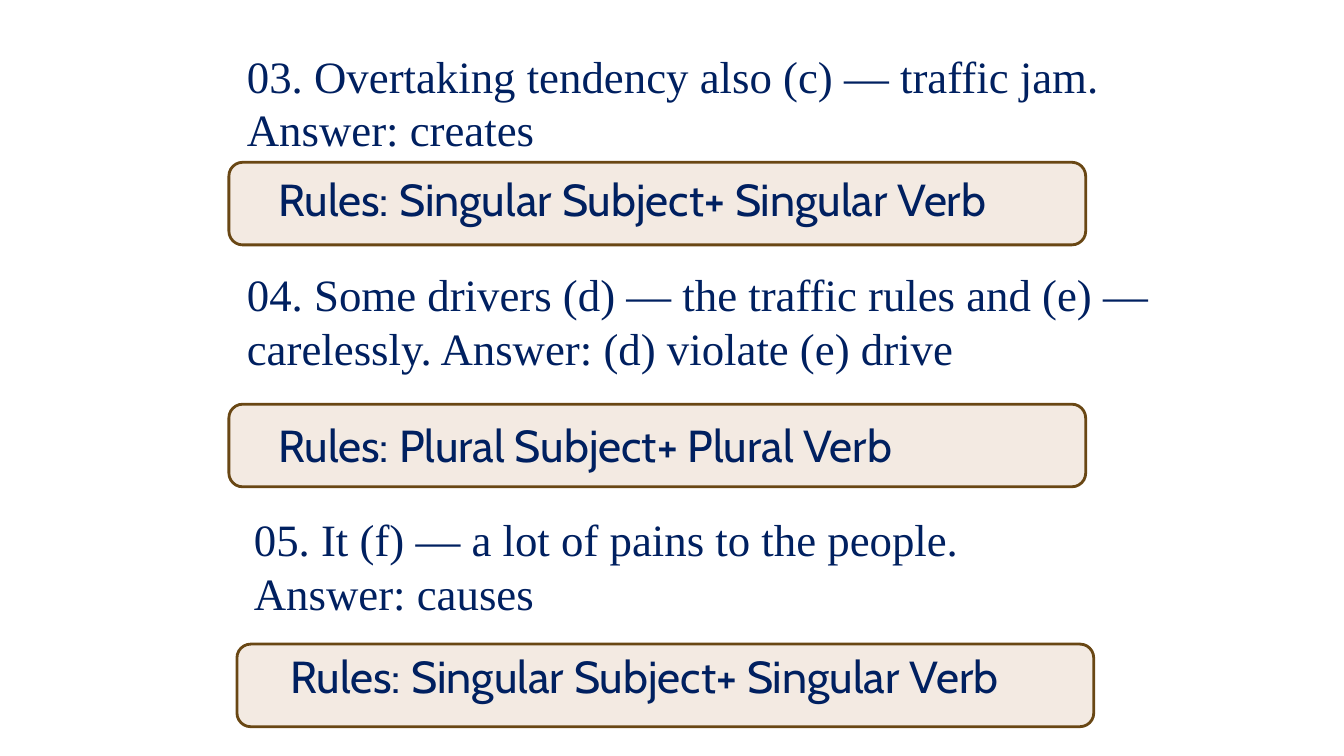
from dataclasses import dataclass

from pptx import Presentation
from pptx import util as u
from pptx.dml.color import RGBColor
from pptx.enum import shapes, text

SLIDE_WIDTH = u.Inches(13.33)
SLIDE_HEIGHT = u.Inches(7.5)
INK, PANEL_FILL, PANEL_LINE = "002060", "F3EAE2", "694714"


@dataclass
class Area:
    left: float
    top: float
    width: float
    height: float

    def lengths(self) -> tuple[int, int, int, int]:
        return (
            int(SLIDE_WIDTH * self.left / 100),
            int(SLIDE_HEIGHT * self.top / 100),
            int(SLIDE_WIDTH * self.width / 100),
            int(SLIDE_HEIGHT * self.height / 100),
        )


@dataclass
class Exercise:
    question: str
    question_left: float
    question_top: float
    question_width: float
    rule: str
    rule_left: float
    rule_top: float
    panel_left: float
    panel_top: float


EXERCISES = [
    Exercise(
        "03. Overtaking tendency also (c) — traffic jam.\nAnswer: creates",
        17.63, 5.73, 68.1,
        "Rules: Singular Subject+ Singular Verb", 19.95, 22, 17.03, 21.47,
    ),
    Exercise(
        "04. Some drivers (d) — the traffic rules and (e) — carelessly. "
        "Answer: (d) violate (e) drive",
        17.63, 34.67, 69.9,
        "Rules: Plural Subject+ Plural Verb", 19.95, 54.53, 17.03, 53.47,
    ),
    Exercise(
        "05. It (f) — a lot of pains to the people.\nAnswer: causes",
        18.15, 67.07, 68.85,
        "Rules: Singular Subject+ Singular Verb", 20.85, 85.2, 17.63, 85.2,
    ),
]


def colour(value: str) -> RGBColor:
    return RGBColor.from_string(value)


def draw_panel(slide, area: Area) -> None:
    panel = slide.shapes.add_shape(
        shapes.MSO_SHAPE.ROUNDED_RECTANGLE, *area.lengths()
    )
    panel.shadow.inherit = False
    panel.fill.solid()
    panel.fill.fore_color.rgb = colour(PANEL_FILL)
    panel.line.color.rgb = colour(PANEL_LINE)
    panel.line.width = u.Pt(2)


def draw_text(slide, wording: str, area: Area, font_name: str) -> None:
    frame = slide.shapes.add_textbox(*area.lengths()).text_frame
    frame.word_wrap = True
    frame.auto_size = text.MSO_AUTO_SIZE.SHAPE_TO_FIT_TEXT
    frame.text = wording
    for paragraph in frame.paragraphs:
        for run in paragraph.runs:
            run.font.name = font_name
            run.font.size = u.Pt(32)
            run.font.color.rgb = colour(INK)


def draw_exercise(slide, exercise: Exercise) -> None:
    draw_panel(
        slide, Area(exercise.panel_left, exercise.panel_top, 63.75, 10.93)
    )
    draw_text(
        slide,
        exercise.question,
        Area(exercise.question_left, exercise.question_top,
             exercise.question_width, 15.73),
        "Times New Roman",
    )
    draw_text(
        slide,
        exercise.rule,
        Area(exercise.rule_left, exercise.rule_top, 56.03, 8.53),
        "Cabin",
    )


def main() -> None:
    deck = Presentation()
    deck.slide_width = SLIDE_WIDTH
    deck.slide_height = SLIDE_HEIGHT
    slide = deck.slides.add_slide(deck.slide_layouts[6])
    for exercise in EXERCISES:
        draw_exercise(slide, exercise)
    deck.save("out.pptx")


if __name__ == "__main__":
    main()
